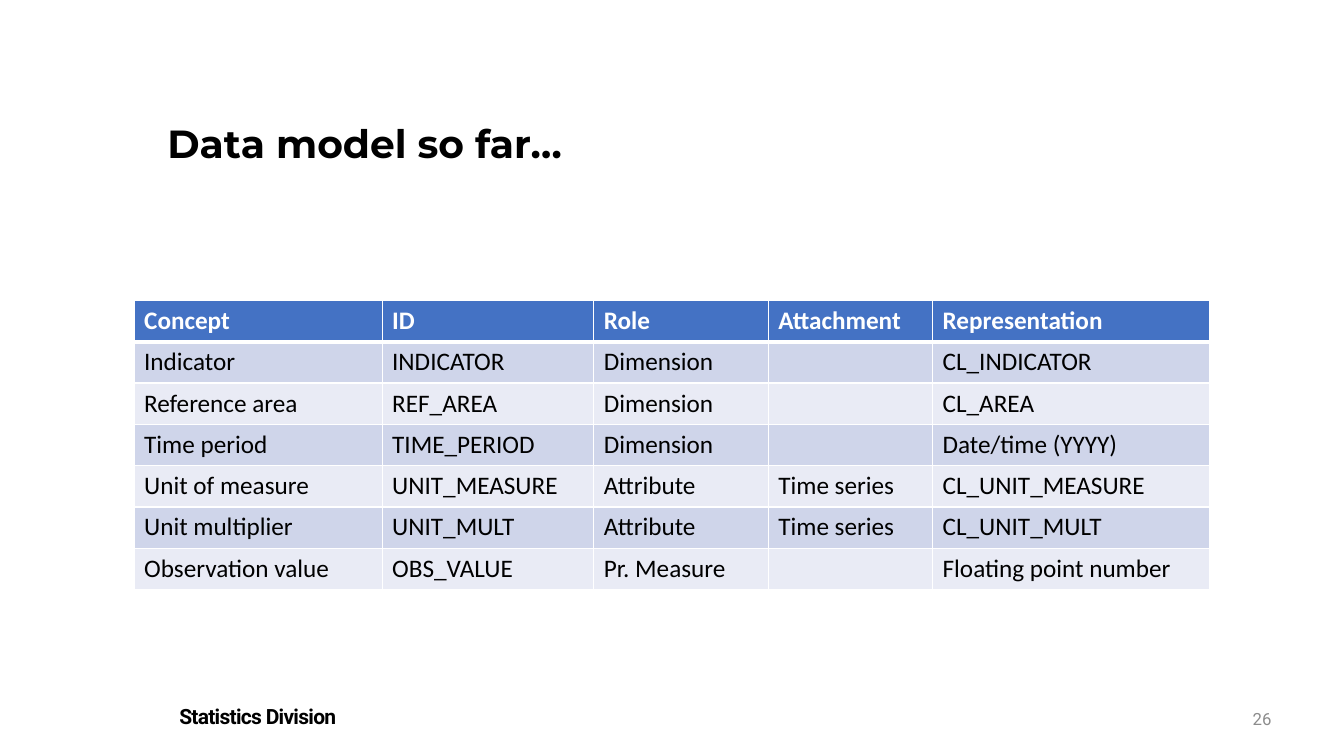
from lxml import etree
from pptx import Presentation
from pptx import util as u
from pptx.dml.color import RGBColor
from pptx.enum import text
from pptx.oxml import ns

PX = 9144
COLUMNS = [246, 210, 173, 163, 275]
ROWS = [
    ["Concept", "ID", "Role", "Attachment", "Representation"],
    ["Indicator", "INDICATOR", "Dimension", "", "CL_INDICATOR"],
    ["Reference area", "REF_AREA", "Dimension", "", "CL_AREA"],
    ["Time period", "TIME_PERIOD", "Dimension", "", "Date/time (YYYY)"],
    ["Unit of measure", "UNIT_MEASURE", "Attribute", "Time series", "CL_UNIT_MEASURE"],
    ["Unit multiplier", "UNIT_MULT", "Attribute", "Time series", "CL_UNIT_MULT"],
    ["Observation value", "OBS_VALUE", "Pr. Measure", "", "Floating point number"],
]


def paint(fill, color):
    fill.solid()
    fill.fore_color.rgb = RGBColor.from_string(color)


class Slide:
    black, white, gray = "000000", "FFFFFF", "8C8C8C"
    header, bands = "4472C4", ["CFD5EA", "E9EBF5"]

    def __init__(self, deck):
        self.page = deck.slides.add_slide(deck.slide_layouts[5])
        paint(self.page.background.fill, self.white)

    def set_words(self, frame, words, font, size, color, bold=False, spacing=0):
        frame.text = words
        para = frame.paragraphs[0]
        para.font.size = u.Pt(size)
        for span in para.runs:
            span.font.name = font
            span.font.size = u.Pt(size)
            span.font.bold = bold
            paint(span.font.fill, color)
            if spacing:
                span._r.get_or_add_rPr().set("spc", str(spacing))
        return para

    def title(self, words, left, top, width, height):
        box = self.page.shapes.title
        box.left, box.top, box.width, box.height = (
            side * PX for side in (left, top, width, height))
        frame = box.text_frame
        frame.auto_size = text.MSO_AUTO_SIZE.NONE
        frame.vertical_anchor = text.MSO_ANCHOR.TOP
        para = self.set_words(frame, words, "Montserrat", 28, self.black, True)
        para.alignment = text.PP_ALIGN.LEFT
        para.line_spacing = 0.9

    def label(self, words, left, top, width, height, size, color, align,
              anchor=text.MSO_ANCHOR.TOP, bold=False, spacing=0):
        box = self.page.shapes.add_textbox(
            left * PX, top * PX, width * PX, height * PX)
        frame = box.text_frame
        frame.word_wrap = True
        frame.vertical_anchor = anchor
        para = self.set_words(frame, words, "Roboto", size, color, bold, spacing)
        para.alignment = align
        return box

    def border(self, cell, side, points):
        line = etree.SubElement(cell._tc.get_or_add_tcPr(), ns.qn(f"a:ln{side}"),
                                w=str(u.Pt(points)))
        fill = etree.SubElement(line, ns.qn("a:solidFill"))
        etree.SubElement(fill, ns.qn("a:srgbClr"), val=self.white)

    def table(self, rows, columns, left, top, row_height):
        grid = self.page.shapes.add_table(
            len(rows), len(columns), left * PX, top * PX,
            sum(columns) * PX, len(rows) * row_height * PX).table
        for column, width in zip(grid.columns, columns):
            column.width = width * PX
        for r, row in enumerate(rows):
            grid.rows[r].height = row_height * PX
            heading = r == 0
            fill = self.header if heading else self.bands[(r - 1) % 2]
            color = self.white if heading else self.black
            for c, words in enumerate(row):
                cell = grid.cell(r, c)
                self.set_words(cell.text_frame, words, "Calibri", 18, color, heading)
                thickness = {"L": 1, "R": 1, "T": 3 if r == 1 else 1,
                             "B": 3 if heading else 1}
                for side, points in thickness.items():
                    self.border(cell, side, points)
                paint(cell.fill, fill)


def main():
    deck = Presentation()
    deck.slide_width, deck.slide_height = 1333 * PX, 750 * PX
    slide = Slide(deck)
    division = slide.label("Statistics Division", 168, 693, 584, 35, 15, slide.black,
                           text.PP_ALIGN.LEFT, bold=True, spacing=-50)
    paint(division.fill, slide.white)
    slide.title("Data model so far…", 156, 119, 1086, 91)
    slide.label("26", 1207, 693, 64, 40, 12, slide.gray,
                text.PP_ALIGN.RIGHT, text.MSO_ANCHOR.MIDDLE)
    slide.table(ROWS, COLUMNS, 133, 298, 41)
    deck.save("out.pptx")


if __name__ == "__main__":
    main()
